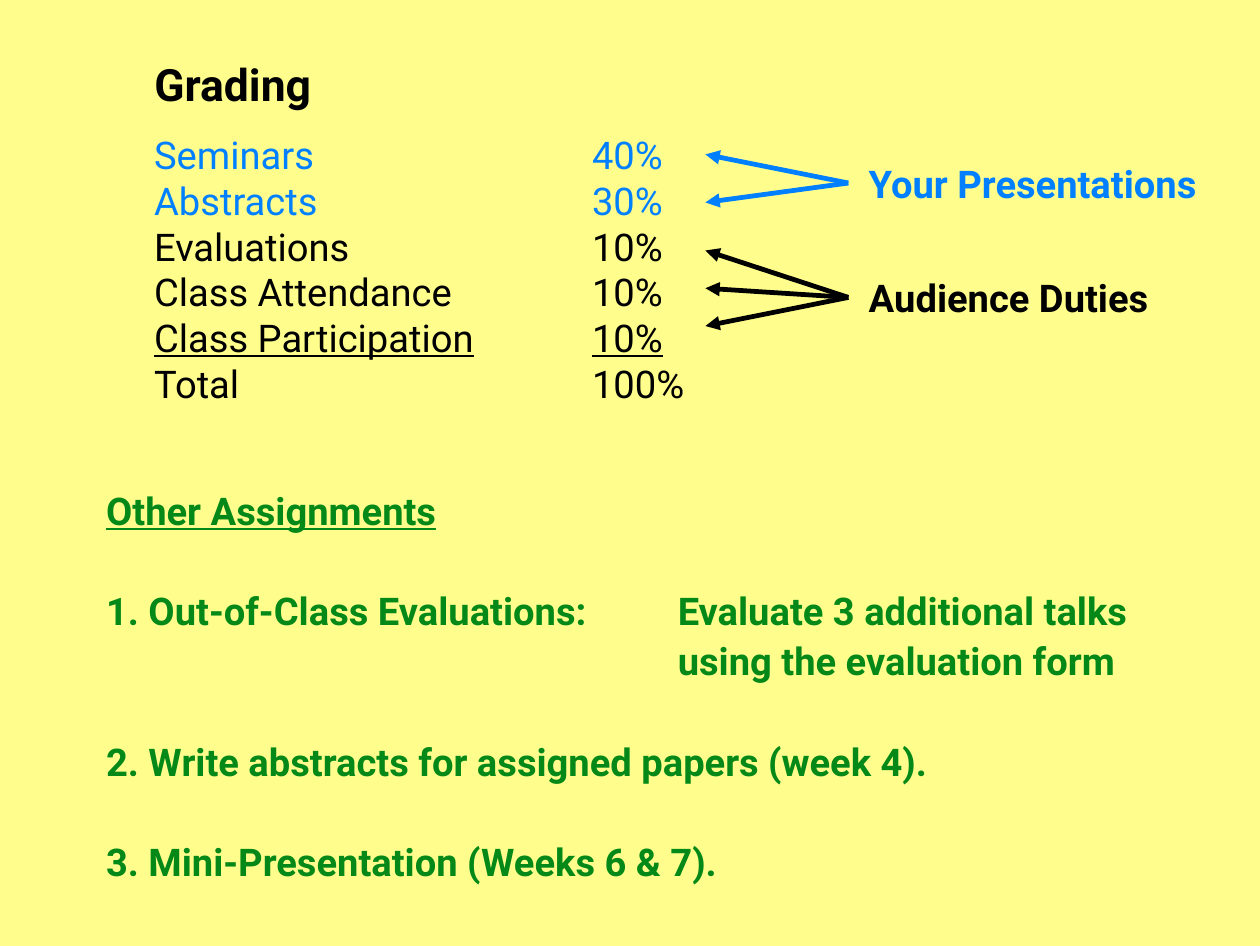
import pptx
import pptx.dml.color
import pptx.enum.shapes
import pptx.enum.text
import pptx.oxml.ns
import pptx.util
from lxml import etree

Inches = pptx.util.Inches
COLORS = {"paper": "FFFE8D", "blue": "0080FF", "black": "000000", "green": "048817"}


def rgb(name):
    return pptx.dml.color.RGBColor.from_string(COLORS[name])


def add_text(p, text, color="black", size=24, bold=False, underline=False):
    r = p.add_run()
    r.text = text
    r.font.name = "Roboto"
    r.font.size = pptx.util.Pt(size)
    r.font.bold = bold
    r.font.underline = underline
    r.font.color.rgb = rgb(color)


class Deck:
    def __init__(self, width, height):
        self.prs = pptx.Presentation()
        self.prs.slide_width = Inches(width)
        self.prs.slide_height = Inches(height)

    def slide(self):
        self.s = self.prs.slides.add_slide(self.prs.slide_layouts[5])
        fill = self.s.background.fill
        fill.solid()
        fill.fore_color.rgb = rgb("paper")

    def frame(self, sp):
        tf = sp.text_frame
        tf.word_wrap = True
        tf.auto_size = pptx.enum.text.MSO_AUTO_SIZE.SHAPE_TO_FIT_TEXT
        tf.vertical_anchor = pptx.enum.text.MSO_ANCHOR.TOP
        return tf

    def title(self, text, x, y, w, h):
        sp = self.s.shapes.title
        sp.left, sp.top, sp.width, sp.height = map(Inches, (x, y, w, h))
        p = self.frame(sp).paragraphs[0]
        p.alignment = pptx.enum.text.PP_ALIGN.LEFT
        p.line_spacing = 1.1
        add_text(p, text, size=28, bold=True)

    def box(self, x, y, w, h):
        return self.frame(self.s.shapes.add_textbox(*map(Inches, (x, y, w, h))))

    def paragraph(self, tf, first, spacing=1.0, before=0, tab=None):
        p = tf.paragraphs[0] if first else tf.add_paragraph()
        p.line_spacing = spacing
        p.space_before = pptx.util.Pt(before)
        if tab:
            tabs = etree.SubElement(p._p.get_or_add_pPr(), pptx.oxml.ns.qn("a:tabLst"))
            etree.SubElement(tabs, pptx.oxml.ns.qn("a:tab"), pos=str(Inches(tab)), algn="l")
        return p

    def label(self, text, x, y, w, color):
        p = self.paragraph(self.box(x, y, w, 0.5), True)
        add_text(p, text, color, bold=True)

    def arrow(self, tip, tail, color):
        sp = self.s.shapes.add_connector(
            pptx.enum.shapes.MSO_CONNECTOR.STRAIGHT, *map(Inches, tip + tail))
        sp.line.color.rgb = rgb(color)
        sp.line.width = pptx.util.Pt(3)
        etree.SubElement(sp.line._get_or_add_ln(), pptx.oxml.ns.qn("a:headEnd"), type="triangle")
        etree.SubElement(sp._element.spPr, pptx.oxml.ns.qn("a:effectLst"))


def main():
    deck = Deck(11.02, 8.27)
    deck.slide()
    deck.title("Grading", 1.25, 0.4, 4.58, 0.61)

    grades = [
        ("Seminars", "40%", "blue", False),
        ("Abstracts", "30%", "blue", False),
        ("Evaluations", "10%", "black", False),
        ("Class Attendance", "10%", "black", False),
        ("Class Participation", "10%", "black", True),
        ("Total", "100%", "black", False),
    ]
    tf = deck.box(1.25, 1.1, 5.03, 2.93)
    for i, (item, share, color, underline) in enumerate(grades):
        p = deck.paragraph(tf, i == 0, tab=3.83)
        add_text(p, item, color, underline=underline)
        add_text(p, "\t", color)
        add_text(p, share, color, underline=underline)

    assignments = [
        ("Other Assignments", 0),
        ("1. Out-of-Class Evaluations:\tEvaluate 3 additional talks", 31.5),
        ("\tusing the evaluation form", 0),
        ("2. Write abstracts for assigned papers (week 4).", 31.5),
        ("3. Mini-Presentation (Weeks 6 & 7).", 31.5),
    ]
    tf = deck.box(0.83, 4.17, 9.5, 3.65)
    for i, (text, before) in enumerate(assignments):
        p = deck.paragraph(tf, i == 0, spacing=1.1, before=before, tab=5)
        add_text(p, text, "green", bold=True, underline=i == 0)

    groups = [
        ("Your Presentations", 1.6, "blue", (1.35, 1.77)),
        ("Audience Duties", 2.6, "black", (2.19, 2.52, 2.85)),
    ]
    for text, middle, color, tips in groups:
        deck.label(text, 7.5, middle - 0.25, 3.4, color)
        for tip in tips:
            deck.arrow((6.17, tip), (7.42, middle), color)

    deck.prs.save("out.pptx")


if __name__ == "__main__":
    main()
